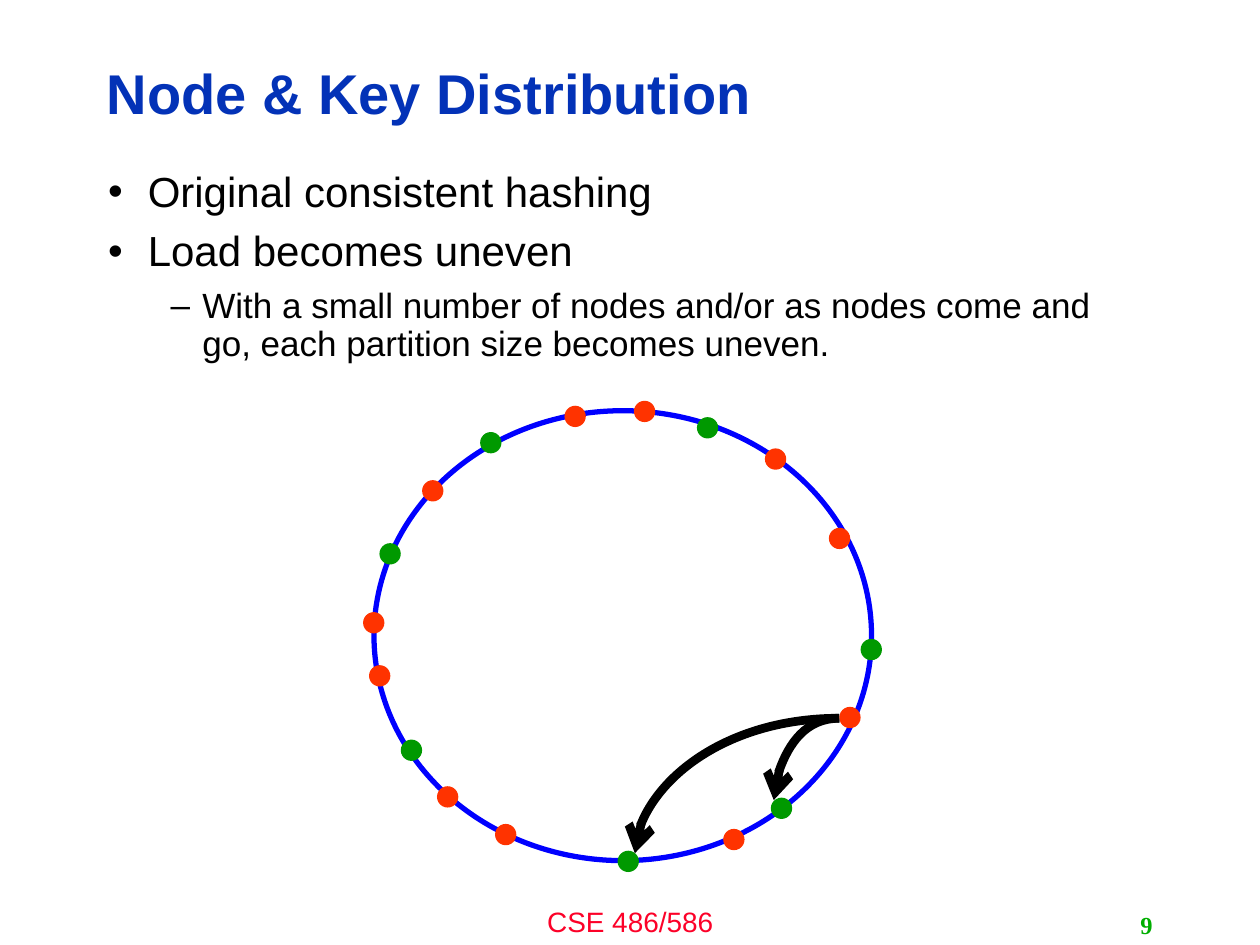
from dataclasses import dataclass

from pptx import Presentation
from pptx.dml.color import RGBColor
from pptx.enum import shapes, text
from pptx.oxml import ns
from pptx.util import Cm, Pt
from lxml import etree


@dataclass(frozen=True)
class Theme:
    title: str = "0332B7"
    body: str = "000000"
    footer: str = "FC0128"
    number: str = "00AE00"
    ring: str = "0000FF"
    key: str = "FF3300"
    node: str = "009900"
    sans: str = "Arial"
    serif: str = "Times New Roman"
    title_size: int = 32
    body_size: int = 24
    detail_size: int = 20
    footer_size: int = 16
    number_size: int = 14
    ring_width: int = 3
    arrow_width: int = 5


THEME = Theme()
DOT = 0.43

# Top left corners of the dots, in centimetres
KEYS = [(12.78, 8.08), (15.42, 9.04), (16.71, 10.64), (16.92, 14.25),
        (14.58, 16.71), (9.98, 16.61), (8.81, 15.85), (7.44, 13.41),
        (7.32, 12.34), (8.51, 9.68), (11.38, 8.18)]
NODES = [(14.05, 8.41), (17.35, 12.88), (15.54, 16.08), (12.45, 17.15),
         (8.08, 14.91), (7.65, 10.95), (9.68, 8.71)]
ARROW_START = (16.92, 14.48)
ARROW_ENDS = [(15.6, 16.13), (12.8, 17.2)]

# Text, bullet, size, indent and hanging in cm, space before in points
BULLETS = [
    ("Original consistent hashing", "•", THEME.body_size, 0.8, 0.8, 8),
    ("Load becomes uneven", "•", THEME.body_size, 0.8, 0.8, 8),
    ("With a small number of nodes and/or as nodes come and go, "
     "each partition size becomes uneven.", "–", THEME.detail_size, 1.9, 0.64, 7),
]


def apply(target, values):
    for name, value in values.items():
        setattr(target, name, value)


def write(para, words, size, color, font=THEME.sans, bold=False, **layout):
    span = para.add_run()
    span.text = words
    apply(span.font, {"name": font, "size": Pt(size), "bold": bold})
    span.font.color.rgb = RGBColor.from_string(color)
    apply(para, layout)


def set_frame(box, anchor):
    apply(box.text_frame, {"word_wrap": True, "vertical_anchor": anchor,
                           "auto_size": text.MSO_AUTO_SIZE.NONE})
    return box.text_frame


def add_title(page, words):
    box = page.shapes.title
    apply(box, {"left": Cm(1.9), "top": Cm(0.91),
                "width": Cm(20.27), "height": Cm(2.06)})
    frame = set_frame(box, text.MSO_ANCHOR.MIDDLE)
    write(frame.paragraphs[0], words, THEME.title_size, THEME.title, bold=True,
          alignment=text.PP_ALIGN.LEFT, line_spacing=0.9)


def add_box(page, left, top, width, height, anchor=text.MSO_ANCHOR.TOP):
    box = page.shapes.add_textbox(Cm(left), Cm(top), Cm(width), Cm(height))
    return set_frame(box, anchor)


def set_bullet(para, mark, indent, hanging):
    props = para._p.get_or_add_pPr()
    props.set("marL", str(Cm(indent)))
    props.set("indent", str(-Cm(hanging)))
    etree.SubElement(props, ns.qn("a:buFont"), typeface=THEME.sans)
    etree.SubElement(props, ns.qn("a:buChar"), char=mark)


def add_bullets(page):
    frame = add_box(page, 1.93, 3.33, 21.34, 13.69)
    for index, (words, mark, size, indent, hanging, gap) in enumerate(BULLETS):
        para = frame.add_paragraph() if index else frame.paragraphs[0]
        write(para, words, size, THEME.body, line_spacing=0.9, space_before=Pt(gap))
        set_bullet(para, mark, indent, hanging)


def add_oval(page, left, top, width, height):
    oval = page.shapes.add_shape(shapes.MSO_SHAPE.OVAL,
                                 Cm(left), Cm(top), Cm(width), Cm(height))
    oval.shadow.inherit = False
    return oval


def add_ring(page):
    ring = add_oval(page, 7.54, 8.28, 10.03, 9.07)
    ring.fill.background()
    ring.line.color.rgb = RGBColor.from_string(THEME.ring)
    ring.line.width = Pt(THEME.ring_width)


def add_dots(page, corners, color):
    for left, top in corners:
        dot = add_oval(page, left, top, DOT, DOT)
        dot.fill.solid()
        dot.fill.fore_color.rgb = RGBColor.from_string(color)
        dot.line.fill.background()


def add_curved_arrow(page, start, end):
    """Draw a quarter curve that leaves sideways and arrives from above."""
    arrow = page.shapes.add_connector(shapes.MSO_CONNECTOR.CURVE,
                                      *map(Cm, start + end))
    arrow.line.color.rgb = RGBColor.from_string(THEME.body)
    arrow.line.width = Pt(THEME.arrow_width)
    props = arrow._element.spPr
    props.find(ns.qn("a:prstGeom")).set("prst", "curvedConnector2")
    etree.SubElement(props.find(ns.qn("a:ln")), ns.qn("a:tailEnd"), type="arrow")
    etree.SubElement(props, ns.qn("a:effectLst"))


def main():
    deck = Presentation()
    apply(deck, {"slide_width": Cm(25.4), "slide_height": Cm(19.05)})
    page = deck.slides.add_slide(deck.slide_layouts.get_by_name("Title Only"))

    add_title(page, "Node & Key Distribution")
    add_bullets(page)
    footer = add_box(page, 8.47, 18.11, 8.47, 0.94)
    write(footer.paragraphs[0], "CSE 486/586", THEME.footer_size, THEME.footer,
          alignment=text.PP_ALIGN.CENTER)
    number = add_box(page, 18.21, 18.24, 5.28, 0.81, text.MSO_ANCHOR.MIDDLE)
    write(number.paragraphs[0], "9", THEME.number_size, THEME.number,
          THEME.serif, bold=True, alignment=text.PP_ALIGN.RIGHT)

    add_ring(page)
    add_dots(page, KEYS, THEME.key)
    add_dots(page, NODES, THEME.node)
    for end in ARROW_ENDS:
        add_curved_arrow(page, ARROW_START, end)

    deck.save("out.pptx")


if __name__ == "__main__":
    main()
